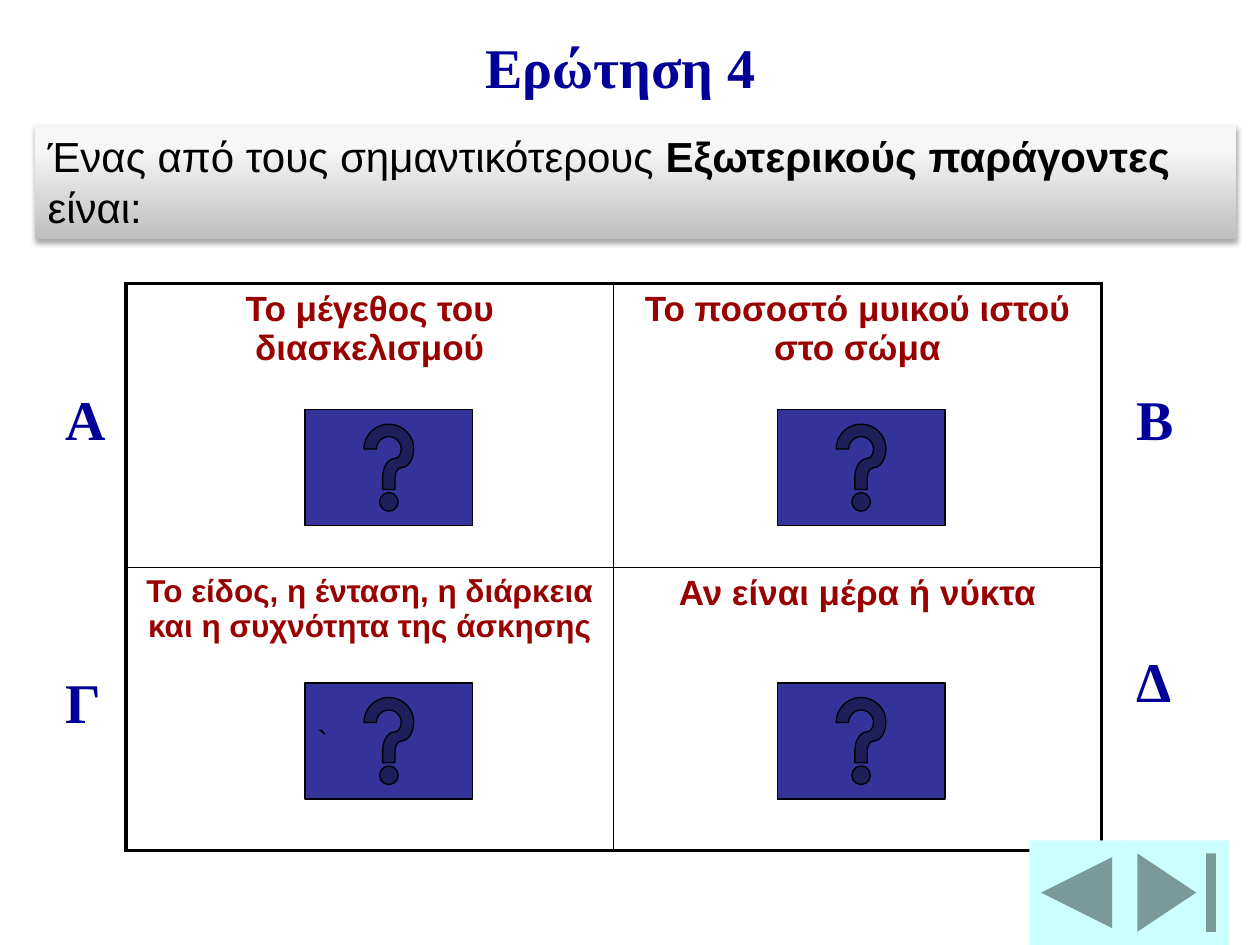
from lxml import etree
from pptx import Presentation
from pptx import util as u
from pptx.dml.color import RGBColor
from pptx.enum import shapes, text
from pptx.oxml import parse_xml
from pptx.oxml.ns import nsdecls, qn

TITLE = "Ερώτηση 4"
QUESTION = [("Ένας από τους σημαντικότερους ", False),
            ("Εξωτερικούς παράγοντες ", True), ("είναι:", False)]
ANSWERS = [[("Το μέγεθος του διασκελισμού", 20), ("Το ποσοστό μυικού ιστού στο σώμα", 20)],
           [("Το είδος, η ένταση, η διάρκεια και η συχνότητα της άσκησης", 18),
            ("Αν είναι μέρα ή νύκτα", 20)]]
LETTERS = [("Α", 1.07, 7.62), ("Γ", 1.07, 13.34), ("Β", 22.66, 7.62), ("Δ", 22.66, 12.9)]
HELP_COLUMNS = (6.15, 15.67)
HELP_ROWS = (8.26, 13.77)
NAVIGATION = [(shapes.MSO_SHAPE.ACTION_BUTTON_END, (22.66, 16.94, 2.12, 2.11)),
              (shapes.MSO_SHAPE.ACTION_BUTTON_BACK_OR_PREVIOUS, (20.75, 16.94, 1.91, 2.11))]

HEADING = {"name": "Times New Roman", "size": u.Pt(32), "bold": True}
BODY = {"name": "Arial", "size": u.Pt(24), "bold": False}
ANSWER = {"name": "Arial", "bold": True}
FRAME = {"auto_size": text.MSO_AUTO_SIZE.NONE, "word_wrap": True,
         "vertical_anchor": text.MSO_ANCHOR.TOP}
THICK, THIN = 2.25, 1


def cm(*lengths):
    return [u.Cm(length) for length in lengths]


def apply(target, values):
    for name, value in values.items():
        setattr(target, name, value)


def paint(fill, colour):
    fill.solid()
    fill.fore_color.rgb = RGBColor.from_string(colour)


def write(frame, spans, formats, colour, align=text.PP_ALIGN.LEFT):
    """Fill the first paragraph with (wording, bold) spans."""
    para = frame.paragraphs[0]
    para.alignment = align
    para.space_before = u.Pt(0)
    for wording, bold in spans:
        span = para.add_run()
        span.text = wording
        apply(span.font, {**formats, "bold": bold})
        paint(span.font.fill, colour)


def add_heading(box, wording):
    apply(box.text_frame, FRAME)
    write(box.text_frame, [(wording, True)], HEADING, "000099")


def add_button(page, kind, place, colour, line=None):
    button = page.shapes.add_shape(kind, *cm(*place))
    button.shadow.inherit = False
    paint(button.fill, colour)
    if line:
        paint(button.line.fill, line)
        button.line.width = u.Pt(0.75)
    else:
        button.line.fill.background()
    return button


def add_border(cell, side, points):
    cell._tc.get_or_add_tcPr().append(parse_xml(
        f'<a:ln{side} {nsdecls("a")} w="{u.Pt(points)}"><a:solidFill>'
        f'<a:srgbClr val="000000"/></a:solidFill></a:ln{side}>'))


def add_answers(page):
    frame = page.shapes.add_table(2, 2, *cm(2.54, 5.72, 19.66, 11.43))
    table = frame.table
    apply(table, {"first_row": False, "horz_banding": False})
    for i, row in enumerate(ANSWERS):
        for j, (wording, size) in enumerate(row):
            cell = table.cell(i, j)
            outer = {"L": j == 0, "R": j == 1, "T": i == 0, "B": i == 1}
            for side, is_outer in outer.items():
                add_border(cell, side, THICK if is_outer else THIN)
            paint(cell.fill, "FFFFFF")
            write(cell.text_frame, [(wording, True)], {**ANSWER, "size": u.Pt(size)},
                  "990000", text.PP_ALIGN.CENTER)


def add_question(page):
    banner = add_button(page, shapes.MSO_SHAPE.RECTANGLE, (0.71, 2.51, 24.21, 2.31), "F7F7F7")
    stops = "".join(f'<a:gs pos="{pos}000"><a:srgbClr val="{colour}"/></a:gs>'
                    for pos, colour in [(0, "BEBEBE"), (80, "F7F7F7"), (100, "F8F8F8")])
    properties = banner._element.spPr
    properties.replace(properties.find(qn("a:solidFill")), parse_xml(
        f'<a:gradFill {nsdecls("a")} rotWithShape="1"><a:gsLst>{stops}</a:gsLst>'
        '<a:lin ang="16200000" scaled="0"/></a:gradFill>'))
    shadow = etree.SubElement(properties.find(qn("a:effectLst")), qn("a:outerShdw"),
                              blurRad=str(u.Pt(3.1)), dist=str(u.Pt(1.8)),
                              dir="5400000", rotWithShape="0")
    black = etree.SubElement(shadow, qn("a:srgbClr"), val="000000")
    etree.SubElement(black, qn("a:alpha"), val="35000")
    apply(banner.text_frame, FRAME)
    write(banner.text_frame, QUESTION, BODY, "000000")


def main():
    deck = Presentation()
    deck.slide_width, deck.slide_height = cm(25.4, 19.05)
    page = deck.slides.add_slide(deck.slide_layouts[5])

    title = page.shapes.title
    apply(title, dict(zip(("left", "top", "width", "height"), cm(9.53, 0.53, 6.78, 1.6))))
    add_heading(title, TITLE)

    add_answers(page)
    for letter, left, top in LETTERS:
        add_heading(page.shapes.add_textbox(*cm(left, top, 1.27, 1.6)), letter)

    buttons = {(left, top): add_button(page, shapes.MSO_SHAPE.ACTION_BUTTON_HELP,
                                       (left, top, 3.38, 2.34), "333399", "000000")
               for top in HELP_ROWS for left in HELP_COLUMNS}
    marked = buttons[HELP_COLUMNS[0], HELP_ROWS[1]].text_frame
    apply(marked, {"word_wrap": False, "vertical_anchor": text.MSO_ANCHOR.MIDDLE})
    write(marked, [("`", False)], {**BODY, "size": u.Pt(18)}, "000000")

    for kind, place in NAVIGATION:
        add_button(page, kind, place, "CCFFFF")
    add_question(page)
    deck.save("out.pptx")


if __name__ == "__main__":
    main()
